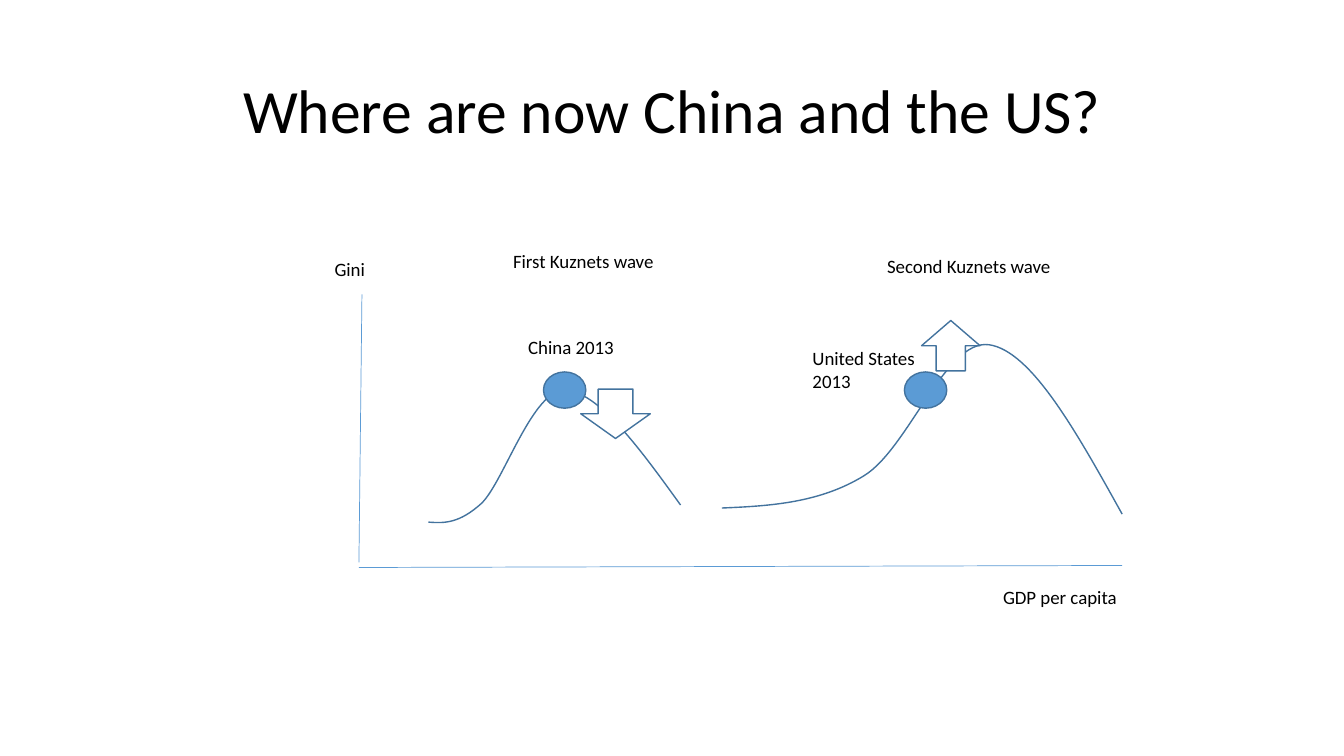
import dataclasses

import lxml.etree
import pptx
import pptx.dml.color
import pptx.enum.shapes
import pptx.enum.text
import pptx.oxml.ns
import pptx.util

Inches = pptx.util.Inches
Shape = pptx.enum.shapes.MSO_SHAPE
Anchor = pptx.enum.text.MSO_ANCHOR
Align = pptx.enum.text.PP_ALIGN
Fit = pptx.enum.text.MSO_AUTO_SIZE
qn = pptx.oxml.ns.qn


@dataclasses.dataclass(frozen=True)
class Theme:
    font: str = "Calibri"
    text: str = "000000"
    paper: str = "FFFFFF"
    accent: str = "5B9BD5"
    outline: str = "43739E"
    title_size: float = 44
    label_size: float = 13.5
    axis_width: float = 0.5
    outline_width: float = 1


@dataclasses.dataclass(frozen=True)
class Box:
    left: float
    top: float
    width: float
    height: float

    def inner(self, left, top, width, height):
        return Box(self.left + left, self.top + top, width, height)

    def lengths(self):
        return [Inches(round(value, 2)) for value in dataclasses.astuple(self)]


@dataclasses.dataclass(frozen=True)
class Wave:
    title: str
    title_at: tuple
    place: str
    place_at: tuple
    dot_at: tuple
    arrow: Shape
    arrow_at: tuple
    knots: tuple


THEME = Theme()

FIRST_WAVE = Wave(
    title="First Kuznets wave",
    title_at=(0.74, -1.44, 1.76, 0.33),
    place="China 2013",
    place_at=(0.89, -0.59, 1.31, 0.33),
    dot_at=(1.14, -0.18, 0.42, 0.36),
    arrow=Shape.DOWN_ARROW,
    arrow_at=(1.51, -0.01, 0.69, 0.49),
    knots=((0, 1.31), (0.15, 1.32), (0.3, 1.33), (0.53, 1.12), (0.75, 0.9),
           (1.03, 0), (1.35, 0), (1.68, 0.01), (2.09, 0.57), (2.5, 1.14)),
)

SECOND_WAVE = Wave(
    title="Second Kuznets wave",
    title_at=(1.54, -0.94, 2.05, 0.33),
    place="United States 2013",
    place_at=(0.8, -0.03, 1.31, 0.56),
    dot_at=(1.81, 0.27, 0.42, 0.36),
    arrow=Shape.UP_ARROW,
    arrow_at=(1.98, -0.24, 0.58, 0.5),
    knots=((0, 1.62), (0.48, 1.6), (0.97, 1.57), (1.41, 1.3), (1.85, 1.03),
           (2.22, -0.06), (2.65, 0), (3.07, 0.06), (3.52, 0.87), (3.97, 1.68)),
)


def color(value):
    return pptx.dml.color.RGBColor.from_string(value)


def add_text(page, box, text, *, size=THEME.label_size, align=Align.LEFT,
             anchor=Anchor.TOP, spacing=None, fit=Fit.SHAPE_TO_FIT_TEXT):
    frame = page.shapes.add_textbox(*box.lengths()).text_frame
    frame.word_wrap = True
    frame.auto_size = fit
    frame.vertical_anchor = anchor
    para = frame.paragraphs[0]
    para.alignment = align
    para.line_spacing = spacing
    span = para.add_run()
    span.text = text
    span.font.name = THEME.font
    span.font.size = pptx.util.Pt(size)
    span.font.color.rgb = color(THEME.text)


def style_outline(shape):
    shape.shadow.inherit = False
    shape.line.color.rgb = color(THEME.outline)
    shape.line.width = pptx.util.Pt(THEME.outline_width)


def add_marker(page, box, kind, fill):
    marker = page.shapes.add_shape(kind, *box.lengths())
    marker.fill.solid()
    marker.fill.fore_color.rgb = color(fill)
    style_outline(marker)


def add_axis(page, start, end):
    axis = page.shapes.add_connector(
        pptx.enum.shapes.MSO_CONNECTOR.STRAIGHT,
        *[Inches(round(value, 2)) for value in (*start, *end)])
    axis.line.color.rgb = color(THEME.accent)
    axis.line.width = pptx.util.Pt(THEME.axis_width)
    lxml.etree.SubElement(axis._element.spPr, qn("a:effectLst"))


def bend_segments(curve, points):
    segments = list(curve._element.iter(qn("a:lnTo")))
    for index, segment in enumerate(segments):
        bend = lxml.etree.Element(qn("a:cubicBezTo"))
        for x, y in points[3 * index + 1:3 * index + 4]:
            lxml.etree.SubElement(bend, qn("a:pt"),
                                  x=str(x - curve.left), y=str(y - curve.top))
        segment.getparent().replace(segment, bend)


def add_curve(page, box, knots):
    points = [(Inches(box.left + x), Inches(box.top + y)) for x, y in knots]
    builder = page.shapes.build_freeform(*points[0])
    builder.add_line_segments(points[3::3], close=False)
    curve = builder.convert_to_shape()
    bend_segments(curve, points)
    curve.fill.background()
    style_outline(curve)


def add_wave(page, box, wave):
    add_curve(page, box, wave.knots)
    add_marker(page, box.inner(*wave.dot_at), Shape.OVAL, THEME.accent)
    add_text(page, box.inner(*wave.place_at), wave.place)
    add_marker(page, box.inner(*wave.arrow_at), wave.arrow, THEME.paper)
    add_text(page, box.inner(*wave.title_at), wave.title)


def add_axes(page, box):
    right = box.left + box.width
    bottom = box.top + box.height
    add_axis(page, (box.left, bottom - 0.05), (box.left + 0.03, box.top))
    add_axis(page, (box.left, bottom), (right, bottom - 0.02))
    add_text(page, box.inner(-0.34, -0.41, 1.16, 0.33), "Gini")
    add_text(page, box.inner(box.width - 1.28, box.height + 0.13, 1.41, 0.33),
             "GDP per capita")


def add_diagram(page, box):
    add_axes(page, box)
    add_wave(page, box.inner(0.69, 0.95, 2.5, 1.32), FIRST_WAVE)
    add_wave(page, box.inner(3.6, 0.5, 3.97, 1.68), SECOND_WAVE)


def add_title(page, box):
    add_text(page, box, "Where are now China and the US?", size=THEME.title_size,
             align=Align.CENTER, anchor=Anchor.MIDDLE, spacing=0.9, fit=Fit.NONE)


def main():
    deck = pptx.Presentation()
    deck.slide_width = Inches(13.33)
    deck.slide_height = Inches(7.5)
    page = deck.slides.add_slide(deck.slide_layouts[6])
    add_title(page, Box(0.92, 0.4, 11.5, 1.45))
    add_diagram(page, Box(3.56, 2.92, 7.57, 2.71))
    deck.save("out.pptx")


if __name__ == "__main__":
    main()
